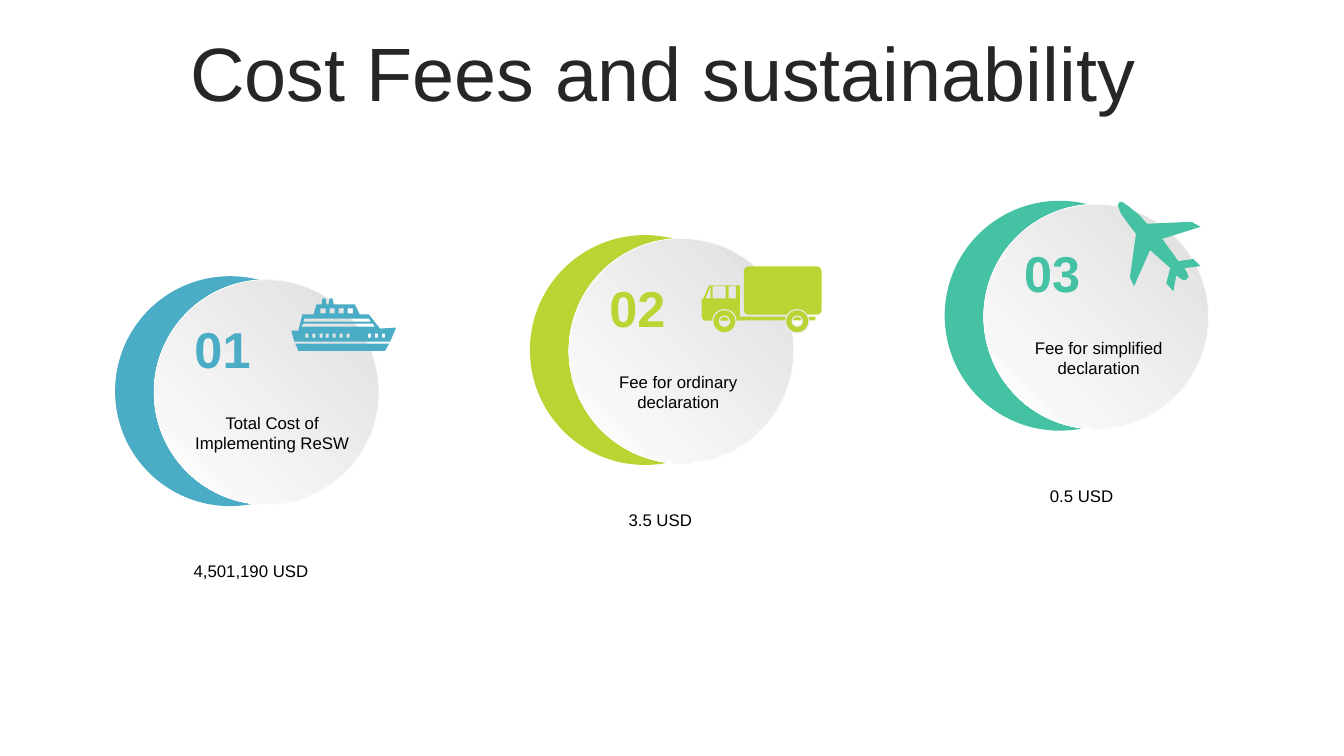
"""Build the slide on cost, fees and sustainability."""
from math import cos, radians, sin

from pptx import Presentation
from pptx.dml.color import RGBColor
from pptx.enum.shapes import MSO_SHAPE
from pptx.enum.text import MSO_ANCHOR, PP_ALIGN
from pptx.util import Pt

OVAL, DONUT = MSO_SHAPE.OVAL, MSO_SHAPE.DONUT
BAR, ROUNDED_BOX = MSO_SHAPE.RECTANGLE, MSO_SHAPE.ROUNDED_RECTANGLE
CENTER, MIDDLE, TOP = PP_ALIGN.CENTER, MSO_ANCHOR.MIDDLE, MSO_ANCHOR.TOP
BLUE, LIME, GREEN = "4BACC6", "B9D533", "45C1A4"
WHITE, PALE_GRAY, DARK_GRAY, BLACK = "FFFFFF", "EBEBEB", "262626", "000000"
COLUMN_LEFT, COLUMN_STEP = 82.2, 296.3
CRESCENT_SIZE, DISC_SIZE = 164.2, 160.6
ICON_UNIT = Pt(0.72)

hex_color = RGBColor.from_string
presentation = Presentation()
presentation.slide_width, presentation.slide_height = Pt(960), Pt(540)
slide = presentation.slides.add_slide(presentation.slide_layouts[6])


def add_preset(kind, left, top, width, height, color):
    shape = slide.shapes.add_shape(kind, Pt(left), Pt(top), Pt(width), Pt(height))
    shape.shadow.inherit = False
    shape.fill.solid()
    shape.fill.fore_color.rgb = hex_color(color)
    shape.line.fill.background()
    return shape


def add_text(text, left, top, width, height, size, color=BLACK, bold=False, anchor=TOP):
    box = slide.shapes.add_textbox(Pt(left), Pt(top), Pt(width), Pt(height))
    text_frame = box.text_frame
    text_frame.word_wrap = True
    text_frame.vertical_anchor = anchor
    text_frame.text = text
    paragraph = text_frame.paragraphs[0]
    paragraph.alignment = CENTER
    font = paragraph.runs[0].font
    font.name, font.size, font.bold = "Arial", Pt(size), bold
    font.color.rgb = hex_color(color)
    return paragraph


title = add_text("Cost Fees and sustainability ", 25.2, 26.6, 911.5, 56.9, 54, DARK_GRAY, anchor=MIDDLE)
title.line_spacing = 0.9
title.space_before = Pt(10)

fees = [
    (BLUE, 197.3, "Total Cost of Implementing ReSW ", 131.8, "4,501,190 USD", 86.4, 397.2),
    (LIME, 167.9, "Fee for ordinary declaration", 421.9, "3.5 USD", 378.7, 360.9),
    (GREEN, 143.4, "Fee for simplified declaration", 722.2, "0.5 USD", 679.7, 343.4),
]
for index, (color, top, label, label_left, price, price_left, price_top) in enumerate(fees):
    left = COLUMN_LEFT + COLUMN_STEP * index
    add_preset(OVAL, left, top, CRESCENT_SIZE, CRESCENT_SIZE, color)

    disc = add_preset(OVAL, left + 27.9, top + 2.5, DISC_SIZE, DISC_SIZE, WHITE)
    disc.fill.gradient()
    disc.fill.gradient_angle = 225
    for stop, shade in zip(disc.fill.gradient_stops, ("DEDEDE", WHITE)):
        stop.color.rgb = hex_color(shade)
    disc.line.color.rgb = hex_color(WHITE)
    disc.line.width = Pt(0.5)

    add_text(label, label_left, top + 94.1, 125.3, 36, 12)
    add_text(f"{index + 1:02}", left + 40.4, top + 26.3, 72.7, 51.1, 36, color, bold=True)
    add_text(price, price_left, price_top, 185.8, 21.6, 12)

keel = [(293, 341), (386, 341), (382, 348), (296, 348)]
hull = [(289, 328), (377, 328), (377, 326), (393, 325), (387, 339), (292, 339)]
decks = [(300, 312), (366, 312), (377, 326), (377, 328), (296, 328)]
bridge = [(314, 302), (352, 302), (357, 312), (311, 312)]
funnels = [[(x, 296), (x + 3, 296), (x + 4, 302), (x - 1, 302)] for x in (320, 327)]
upper_slot = [(302, 316), (366, 316), (368, 319), (301, 319)]
lower_slot = [(301, 321), (370, 321), (372, 324), (299, 324)]
ship_outlines = [keel, hull, decks, bridge, *funnels, upper_slot, lower_slot]

window_rows = [
    (303, 331, 3, 4, 6.8, 7),
    (365, 331, 3, 4, 7, 3),
    (318, 306, 5, 5, 9, 4),
]
ship_windows = [
    (first + step * number, top, width, height)
    for first, top, width, height, step, count in window_rows
    for number in range(count)
]

nose_x, nose_y, heading = 1109.5, 201, radians(48)
fuselage_front = [(0, 0), (2, 3), (10, 5), (23, 7), (35, 7.5)]
wing = [(63, 41), (72, 44.5), (56, 8.5)]
tail_fin = [(83, 5.5), (91.5, 18), (101.5, 18.5), (92, 5)]
tail_end = [(98, 4), (101.5, 2)]
half_plane = fuselage_front + wing + tail_fin + tail_end
mirrored_half = [(along, -out) for along, out in reversed(half_plane[1:])]
plane = [
    (nose_x + along * cos(heading) + out * sin(heading),
     nose_y + along * sin(heading) - out * cos(heading))
    for along, out in half_plane + mirrored_half
]

cab = [(696, 297), (698, 296), (703, 284), (705, 283), (734, 283), (734, 318), (698, 318), (696, 314)]
windscreen = [(705, 284), (705, 296), (700, 296)]
cab_windows = [(707, 284, 13, 12), (723, 284, 7, 12)]

icons = [
    (BLUE, ship_outlines, ship_windows),
    (GREEN, [plane], []),
    (LIME, [cab, windscreen], cab_windows),
]
for color, outlines, windows in icons:
    panes = [[(x, y), (x + w, y), (x + w, y + h), (x, y + h)] for x, y, w, h in windows]
    builder = slide.shapes.build_freeform(scale=ICON_UNIT, *outlines[0][0])
    builder.add_line_segments(outlines[0][1:], close=True)
    for outline in outlines[1:] + panes:
        builder.move_to(*outline[0])
        builder.add_line_segments(outline[1:], close=True)
    icon = builder.convert_to_shape()
    icon.shadow.inherit = False
    icon.fill.solid()
    icon.fill.fore_color.rgb = hex_color(color)
    icon.line.fill.background()

cargo_box = add_preset(ROUNDED_BOX, 531.4, 190.2, 55.5, 34.6, LIME)
cargo_box.adjustments[0] = 0.1
add_preset(BAR, 528.2, 226.2, 54.2, 2.7, LIME)
for wheel_left in (509.2, 561.2):
    wheel = add_preset(DONUT, wheel_left, 221.2, 16.6, 16.6, LIME)
    wheel.adjustments[0] = 0.28
    wheel.line.color.rgb = hex_color(PALE_GRAY)
    wheel.line.width = Pt(0.8)

presentation.save("out.pptx")
